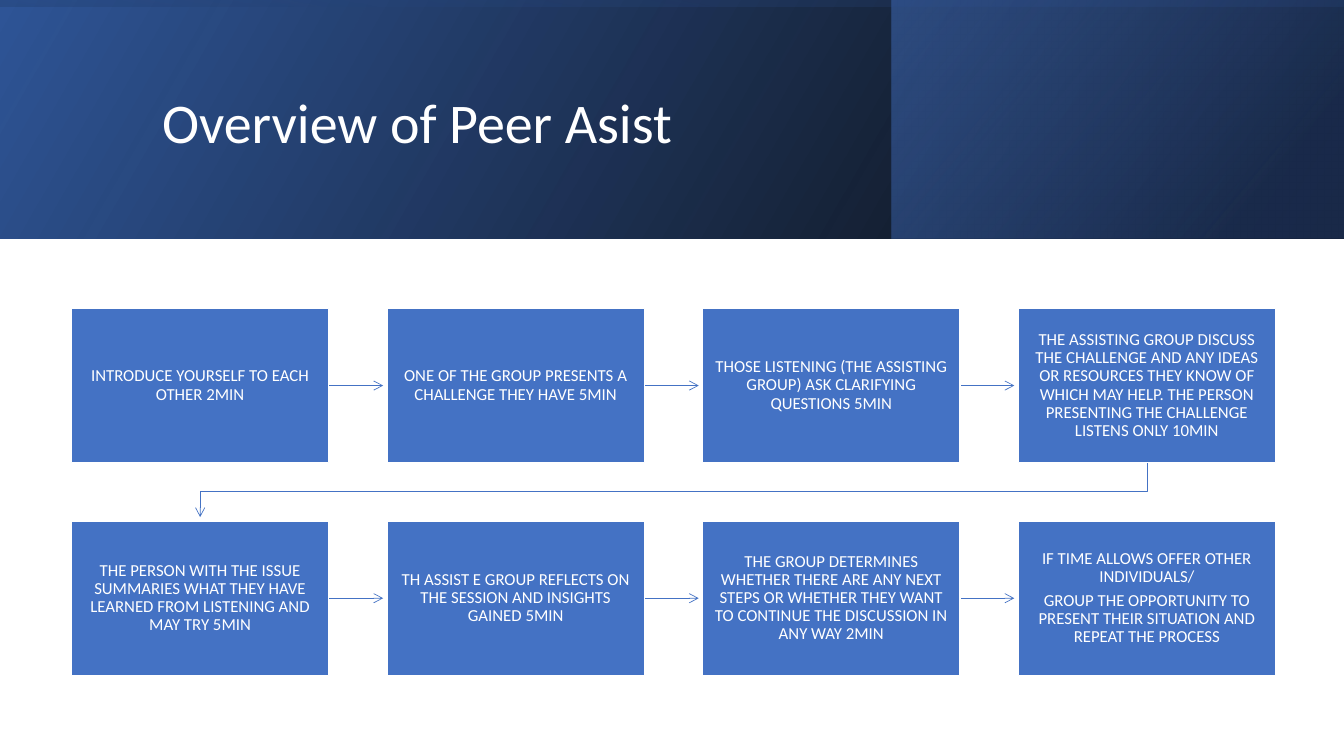
from pptx import Presentation
from pptx.dml.color import RGBColor
from pptx.enum.shapes import MSO_CONNECTOR, MSO_SHAPE
from pptx.enum.text import MSO_ANCHOR, PP_ALIGN
from pptx.oxml import parse_xml
from pptx.oxml.ns import nsdecls, qn
from pptx.util import Inches, Pt

# Content
TITLE = "Overview of Peer Asist"
STEPS = [
    ["INTRODUCE YOURSELF TO EACH OTHER 2MIN"],
    ["ONE OF THE GROUP PRESENTS A CHALLENGE THEY HAVE 5MIN"],
    ["THOSE LISTENING (THE ASSISTING GROUP) ASK CLARIFYING QUESTIONS 5MIN"],
    ["THE ASSISTING GROUP DISCUSS THE CHALLENGE AND ANY IDEAS OR RESOURCES THEY KNOW OF "
     "WHICH MAY HELP. THE PERSON PRESENTING THE CHALLENGE LISTENS ONLY 10MIN"],
    ["THE PERSON WITH THE ISSUE SUMMARIES WHAT THEY HAVE LEARNED FROM LISTENING AND MAY TRY 5MIN"],
    ["TH ASSIST E GROUP REFLECTS ON THE SESSION AND INSIGHTS GAINED 5MIN"],
    ["THE GROUP DETERMINES WHETHER THERE ARE ANY NEXT STEPS OR WHETHER THEY WANT TO CONTINUE "
     "THE DISCUSSION IN ANY WAY 2MIN"],
    ["IF TIME ALLOWS OFFER OTHER INDIVIDUALS/",
     "GROUP THE OPPORTUNITY TO PRESENT THEIR SITUATION AND REPEAT THE PROCESS"],
]
THEME = {"font": "Calibri", "white": "FFFFFF", "blue": "4472C4",
         "title": 40, "body": 12, "arrow": 0.5, "border": 1}
# Banner layers: left, top, width, height, rotation, gradient angle,
# stops as (position %, colour, opacity %)
BANNER = [
    (0, 0, 13.33, 2.37, 0, 330, [(0, "000000", 96), (100, "2F5597", 100)]),
    (8.84, 0, 4.49, 2.37, 0, 320, [(19, "203864", 68), (100, "4472C4", 48)]),
    (5.48, -5.48, 2.37, 13.33, 270, 350, [(23, "2F5597", 16), (99, "000000", 45)]),
]

# Step grid
COLS = 4
LEFT, TOP, BOX_W, BOX_H = 0.71, 3.06, 2.55, 1.53
PITCH_X, PITCH_Y = 3.13, 2.11
TIP_GAP = 0.04

prs = Presentation()
prs.slide_width, prs.slide_height = Inches(13.33), Inches(7.5)
s = prs.slides.add_slide(prs.slide_layouts[6])


def color(name):
    return RGBColor.from_string(THEME[name])


def corner(i):
    row, col = divmod(i, COLS)
    return LEFT + col * PITCH_X, TOP + row * PITCH_Y


def add_rect(x, y, w, h):
    sp = s.shapes.add_shape(MSO_SHAPE.RECTANGLE, Inches(x), Inches(y), Inches(w), Inches(h))
    sp.shadow.inherit = False
    return sp


def gradient(sp, stops, angle):
    sp.fill.background()
    gs = "".join(
        f'<a:gs pos="{pos * 1000}"><a:srgbClr val="{rgb}"><a:alpha val="{alpha * 1000}"/>'
        "</a:srgbClr></a:gs>" for pos, rgb, alpha in stops)
    fill = parse_xml(f'<a:gradFill rotWithShape="1" {nsdecls("a")}><a:gsLst>{gs}</a:gsLst>'
                     f'<a:lin ang="{angle * 60000}" scaled="0"/></a:gradFill>')
    spPr = sp._element.spPr
    spPr.replace(spPr.find(qn("a:noFill")), fill)


def write(tf, lines, size, align, margins):
    tf.word_wrap = True
    tf.vertical_anchor = MSO_ANCHOR.MIDDLE
    for side, value in margins.items():
        setattr(tf, f"margin_{side}", Inches(value))
    for i, line in enumerate(lines):
        p = tf.paragraphs[0] if i == 0 else tf.add_paragraph()
        p.alignment, p.line_spacing = align, 0.9
        p.space_after = Pt(0.35 * size)
        r = p.add_run()
        r.text = line
        for key, value in {"name": THEME["font"], "size": Pt(size)}.items():
            setattr(r.font, key, value)
        r.font.color.rgb = color("white")


def style_arrow(shape):
    shape.line.color.rgb = color("blue")
    shape.line.width = Pt(THEME["arrow"])
    shape.line._get_or_add_ln().append(parse_xml(f'<a:tailEnd type="arrow" {nsdecls("a")}/>'))


# Banner
for x, y, w, h, rotation, angle, stops in BANNER:
    sp = add_rect(x, y, w, h)
    sp.rotation = rotation
    sp._element.spPr.xfrm.set("flipH", "1")
    sp.line.fill.background()
    gradient(sp, stops, angle)

# Title
box = s.shapes.add_textbox(Inches(1.51), Inches(0.38), Inches(10.63), Inches(1.72))
write(box.text_frame, [TITLE], THEME["title"], PP_ALIGN.LEFT, {"left": 0.1, "right": 0.1})
box.text_frame.paragraphs[0].space_after = Pt(0)

# Arrows between steps
for i in range(len(STEPS) - 1):
    x, y = corner(i)
    next_x, next_y = corner(i + 1)
    if y == next_y:
        mid = Inches(y + BOX_H / 2)
        arrow = s.shapes.add_connector(MSO_CONNECTOR.STRAIGHT, Inches(x + BOX_W), mid,
                                       Inches(next_x - TIP_GAP), mid)
        arrow._element.spPr.append(parse_xml(f'<a:effectLst {nsdecls("a")}/>'))
    else:
        start, end = x + BOX_W / 2, next_x + BOX_W / 2
        bottom, turn = y + BOX_H, (y + BOX_H + next_y) / 2
        route = [(start, turn), (end, turn), (end, next_y - TIP_GAP)]
        fb = s.shapes.build_freeform(Inches(start), Inches(bottom))
        fb.add_line_segments([(Inches(px), Inches(py)) for px, py in route], close=False)
        arrow = fb.convert_to_shape()
        arrow.shadow.inherit = False
        arrow.fill.background()
    style_arrow(arrow)

# Step boxes
for i, lines in enumerate(STEPS):
    sp = add_rect(*corner(i), BOX_W, BOX_H)
    sp.fill.solid()
    sp.fill.fore_color.rgb = color("blue")
    sp.line.color.rgb = color("white")
    sp.line.width = Pt(THEME["border"])
    write(sp.text_frame, lines, THEME["body"], PP_ALIGN.CENTER,
          {"left": 0.12, "right": 0.12, "top": 0.13, "bottom": 0.13})

prs.save("out.pptx")
